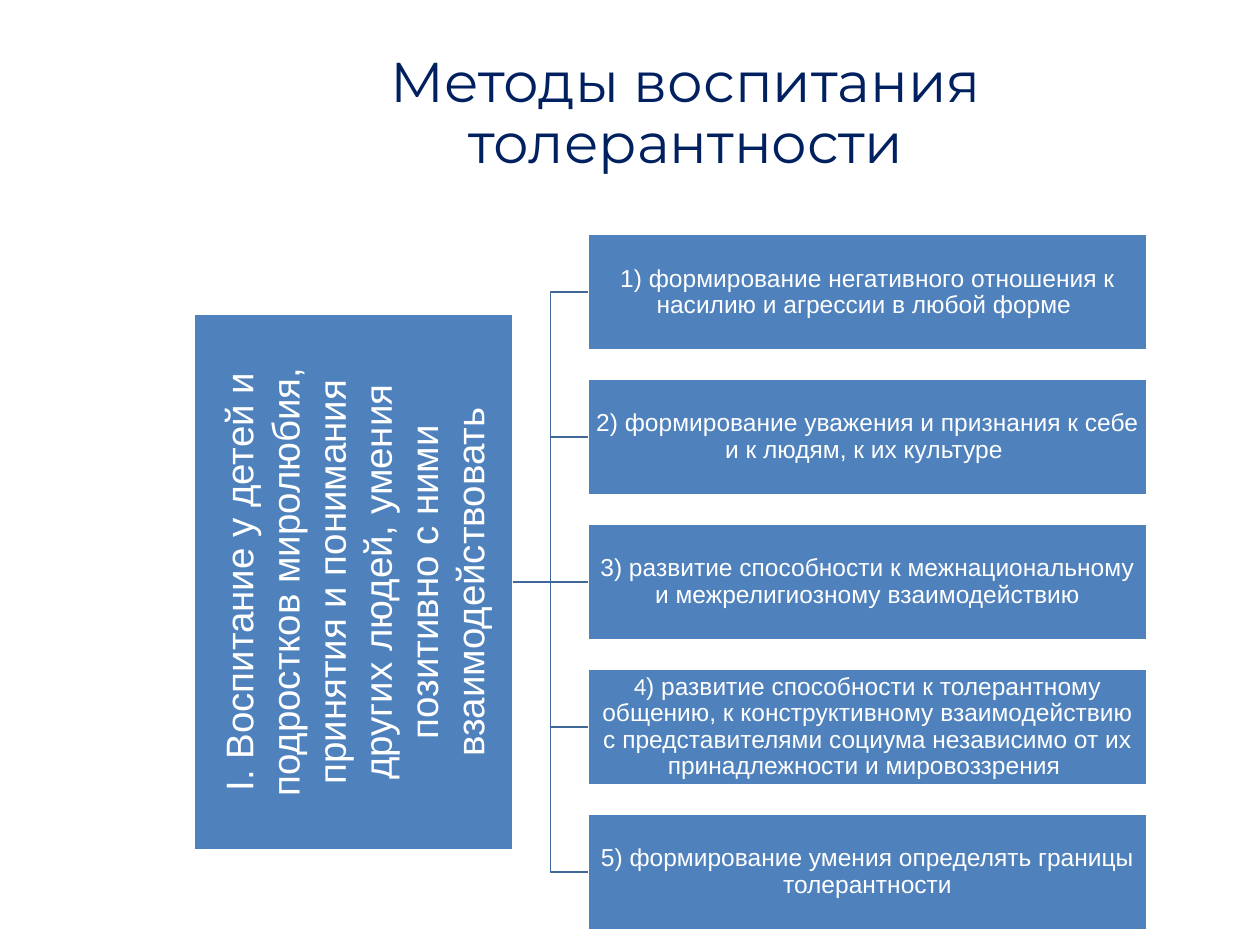
from copy import deepcopy

from lxml.etree import SubElement
from pptx import Presentation
from pptx.dml.color import RGBColor
from pptx.enum.shapes import MSO_CONNECTOR, MSO_SHAPE
from pptx.enum.text import MSO_ANCHOR, PP_ALIGN
from pptx.oxml.ns import qn
from pptx.util import Inches, Pt

NAVY = RGBColor(0x00, 0x20, 0x60)
BLUE = RGBColor(0x4F, 0x81, 0xBD)
DARK_BLUE = RGBColor(0x3F, 0x67, 0x97)
WHITE = RGBColor(0xFF, 0xFF, 0xFF)

TITLE = "Методы воспитания толерантности"
GOAL = (
    "I. Воспитание у детей и подростков миролюбия, принятия и понимания "
    "других людей, умения позитивно с ними взаимодействовать"
)
METHODS = [
    [("1) формирование негативного отношения к насилию и агрессии в любой форме ", "Arial")],
    [("2) формирование уважения и признания к себе и к людям, к их культуре ", "Arial")],
    [("3) развитие способности к межнациональному\nи межрелигиозному взаимодействию", "Arial")],
    [
        ("4", "Calibri"),
        (
            ") развитие способности к толерантному общению, к конструктивному "
            "взаимодействию\nс представителями социума независимо от их "
            "принадлежности и мировоззрения ",
            "Arial",
        ),
    ],
    [("5) формирование умения определять границы толерантности", "Arial")],
]

GOAL_RIGHT = 4.07
GOAL_MIDDLE = 4.62
GOAL_LENGTH, GOAL_DEPTH = 4.25, 2.53
METHOD_LEFT, METHOD_TOP = 4.67, 1.86
METHOD_WIDTH, METHOD_HEIGHT = 4.43, 0.92
METHOD_STEP = 1.15


class SlideBuilder:
    """Holds the style and the current slide, and adds each kind of element."""

    def __init__(self, presentation):
        self.slide = presentation.slides.add_slide(presentation.slide_layouts[5])
        self.line_width = Pt(1)

    def fill_paragraph(self, paragraph, pieces, size, color, line_spacing):
        paragraph.alignment = PP_ALIGN.CENTER
        paragraph.line_spacing = line_spacing
        for text, font_name in pieces:
            for index, line in enumerate(text.split("\n")):
                if index:
                    paragraph.add_line_break()
                    line_break = paragraph._p.findall(qn("a:br"))[-1]
                    line_break.append(deepcopy(run._r.rPr))
                run = paragraph.add_run()
                run.text = line
                values = {"name": font_name, "size": Pt(size)}
                for name, value in values.items():
                    setattr(run.font, name, value)
                run.font.color.rgb = color

    def title(self, text, left, top, width, height):
        shape = self.slide.shapes.title
        position = {"left": left, "top": top, "width": width, "height": height}
        for name, value in position.items():
            setattr(shape, name, Inches(value))
        shape.text_frame.vertical_anchor = MSO_ANCHOR.MIDDLE
        paragraph = shape.text_frame.paragraphs[0]
        self.fill_paragraph(paragraph, [(text, "Montserrat")], 32, NAVY, 0.9)

    def box(self, pieces, left, top, width, height, size, margin, line_spacing=1.0, rotation=0):
        shape = self.slide.shapes.add_shape(
            MSO_SHAPE.RECTANGLE, Inches(left), Inches(top), Inches(width), Inches(height)
        )
        shape.rotation = rotation
        shape.shadow.inherit = False
        shape.fill.solid()
        shape.fill.fore_color.rgb = BLUE
        shape.line.color.rgb = WHITE
        shape.line.width = self.line_width
        frame = shape.text_frame
        values = {"word_wrap": True, "vertical_anchor": MSO_ANCHOR.MIDDLE}
        for side in ("left", "top", "right", "bottom"):
            values[f"margin_{side}"] = Inches(margin)
        for name, value in values.items():
            setattr(frame, name, value)
        self.fill_paragraph(frame.paragraphs[0], pieces, size, WHITE, line_spacing)
        return shape

    def connector(self, kind, begin, end):
        points = [Inches(value) for value in (*begin, *end)]
        connector = self.slide.shapes.add_connector(kind, *points)
        connector.line.color.rgb = DARK_BLUE
        connector.line.width = self.line_width
        SubElement(connector._element.spPr, qn("a:effectLst"))
        return connector


def main():
    presentation = Presentation()
    presentation.slide_width = Inches(10)
    presentation.slide_height = Inches(7.5)
    builder = SlideBuilder(presentation)
    builder.title(TITLE, 1.3, 0.44, 8.29, 0.94)

    goal_left = GOAL_RIGHT - (GOAL_DEPTH + GOAL_LENGTH) / 2
    goal_top = GOAL_MIDDLE - GOAL_DEPTH / 2
    goal = builder.box(
        [(GOAL, "Arial")], goal_left, goal_top, GOAL_LENGTH, GOAL_DEPTH, 22, 0.02, rotation=270
    )
    goal_side = (GOAL_RIGHT, GOAL_MIDDLE)

    for index, pieces in enumerate(METHODS):
        top = METHOD_TOP + index * METHOD_STEP
        method = builder.box(
            pieces, METHOD_LEFT, top, METHOD_WIDTH, METHOD_HEIGHT, 14, 0.01, line_spacing=0.9
        )
        method_side = (METHOD_LEFT, top + METHOD_HEIGHT / 2)
        if index == len(METHODS) // 2:
            connector = builder.connector(MSO_CONNECTOR.STRAIGHT, goal_side, method_side)
            connector.begin_connect(goal, 2)
            connector.end_connect(method, 1)
            connector.begin_x, connector.begin_y = (Inches(value) for value in goal_side)
        else:
            builder.connector(MSO_CONNECTOR.ELBOW, goal_side, method_side)

    presentation.save("out.pptx")


if __name__ == "__main__":
    main()
